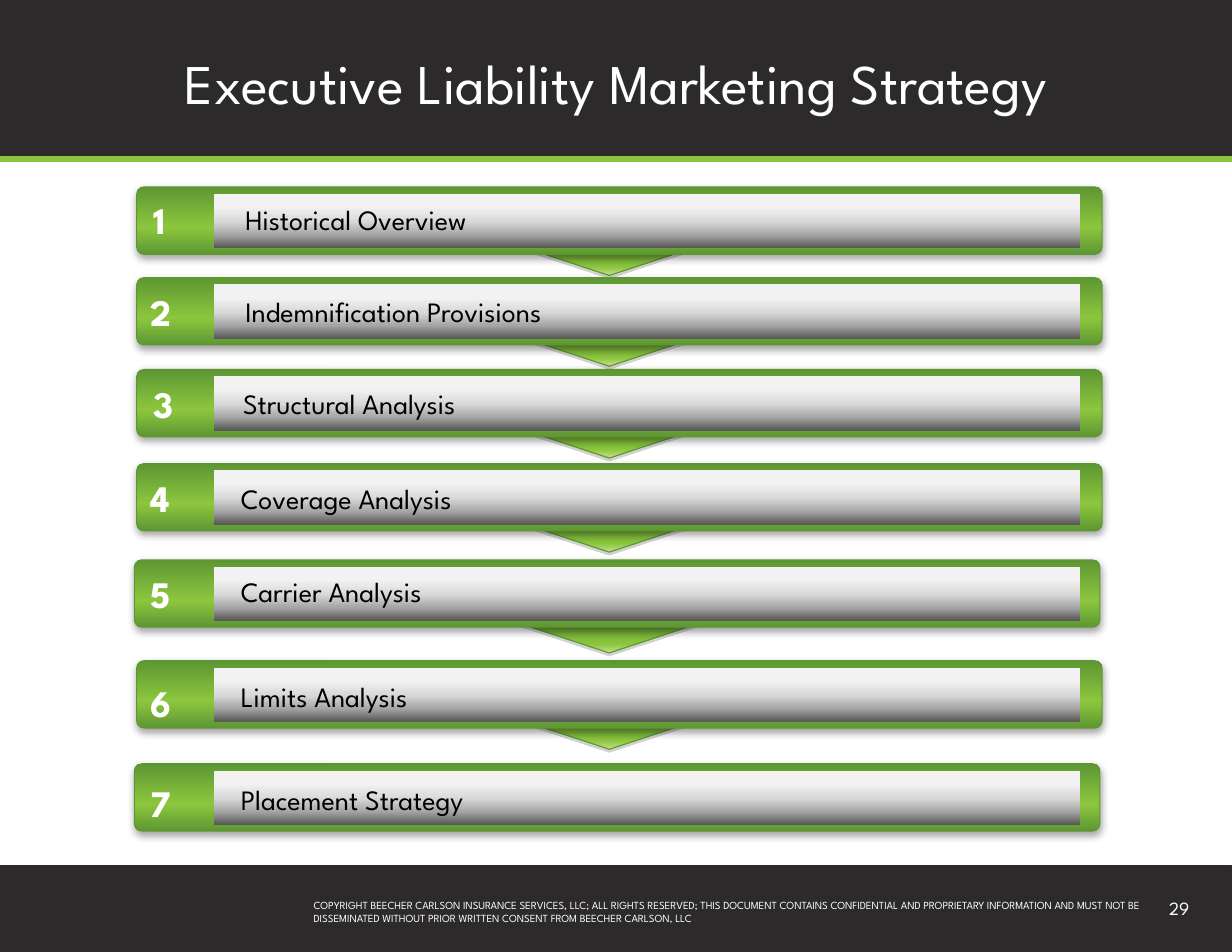
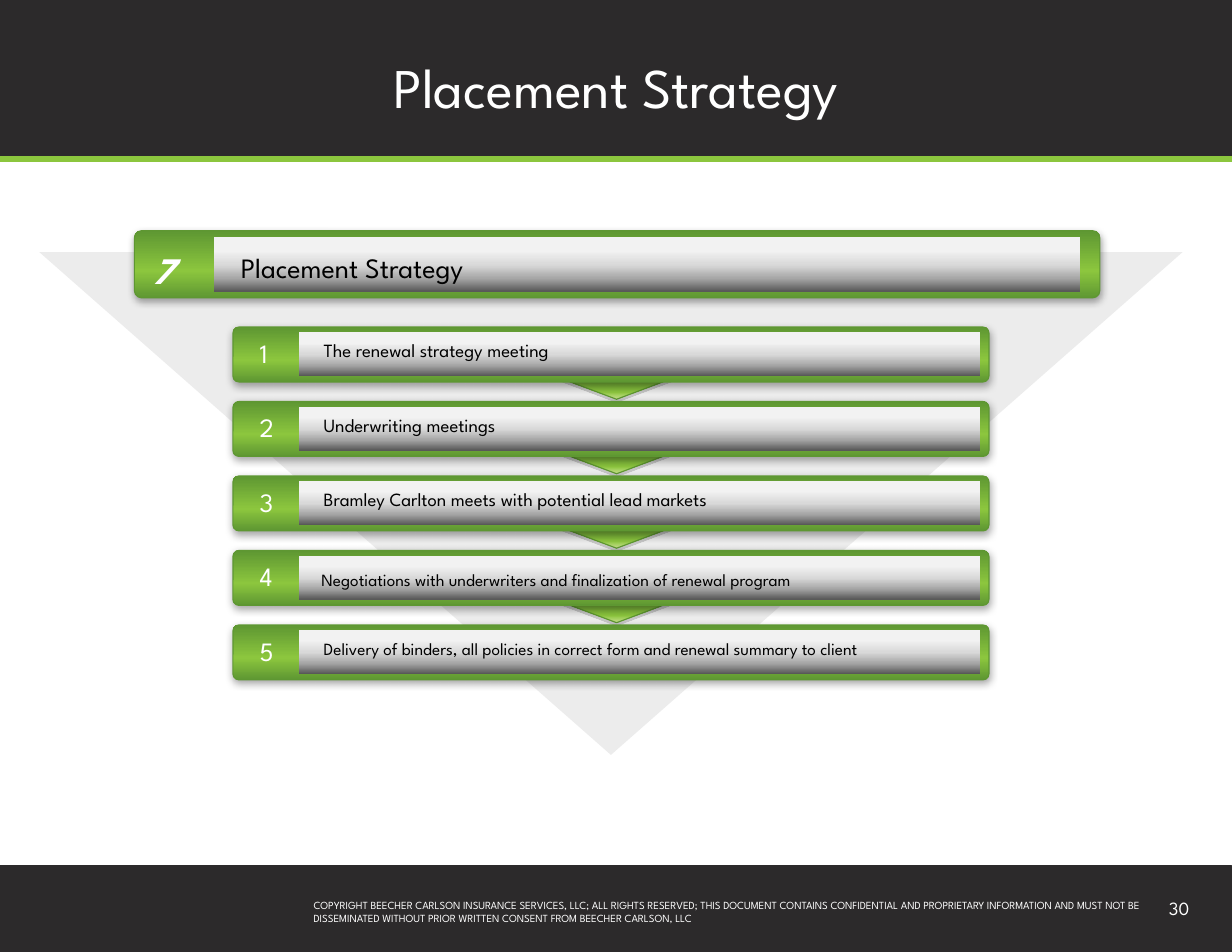
from dataclasses import dataclass

from lxml.etree import SubElement
from pptx import Presentation
from pptx.dml.color import RGBColor
from pptx.enum.shapes import MSO_CONNECTOR, MSO_SHAPE
from pptx.enum.text import MSO_ANCHOR, MSO_AUTO_SIZE, PP_ALIGN
from pptx.oxml.ns import qn
from pptx.util import Inches, Pt

FONT = "League Spartan"
WHITE, BLACK, DARK, PALE = "FFFFFF", "000000", "2C2A2B", "ECECEC"
GREEN, DEEP, LIGHT, GREY = "8CC63E", "5E9732", "C8DF8E", "808080"
BAR_STOPS = [(0, DEEP), (40, GREEN), (100, DEEP)]
ARROW_STOPS = [(0, LIGHT), (25, GREEN), (100, DEEP)]
PANEL_STOPS = [(24, "F2F2F2"), (51, "D9D9D9"), (76, "A6A6A6"), (100, "595959")]
COLS, ROWS = 110, 85
COPYRIGHT = (
    "COPYRIGHT BEECHER CARLSON INSURANCE SERVICES, LLC; ALL RIGHTS RESERVED; "
    "THIS DOCUMENT CONTAINS CONFIDENTIAL AND PROPRIETARY INFORMATION AND MUST NOT BE "
    "DISSEMINATED WITHOUT PRIOR WRITTEN CONSENT FROM BEECHER CARLSON, LLC"
)


@dataclass
class StepSize:
    """Measures of a numbered bar in columns, rows and points."""
    bar_w: float
    bar_h: float
    panel_x: float
    panel_w: float
    panel_h: float
    panel_dy: float
    number_w: float
    number_h: float
    number_pt: float
    bold: bool
    label_w: float
    label_h: float
    arrow_x: float
    arrow_w: float
    arrow_h: float


LARGE = StepSize(86.2, 6, 19.1, 77.35, 4.8, 0.6, 7.3, 5, 24, True,
                 68.1, 3.6, 45.3, 18.2, 3)
SMALL = StepSize(67.5, 4.9, 26.7, 60.8, 3.9, 0.45, 5.3, 3.9, 17, False,
                 59.1, 2.6, 48.4, 13.3, 2.5)


def rgb(value):
    """Turn a hex string into a colour."""
    return RGBColor.from_string(value)


class Deck:
    """Holds the presentation, its style and the current slide."""

    def __init__(self):
        self.prs = Presentation()
        self.prs.slide_width, self.prs.slide_height = Inches(11), Inches(8.5)
        self.s = None

    def box(self, x, y, w, h):
        """Convert columns and rows to slide lengths."""
        col, row = self.prs.slide_width / COLS, self.prs.slide_height / ROWS
        return [round(v) for v in (x * col, y * row, w * col, h * row)]

    def shape(self, kind, at, fill, line=None, line_pt=0.75, shadow=None):
        """Add a shape with a plain or gradient fill and an optional shadow."""
        sp = self.s.shapes.add_shape(kind, *self.box(*at))
        sp.shadow.inherit = False
        if isinstance(fill, str):
            sp.fill.solid()
            sp.fill.fore_color.rgb = rgb(fill)
        else:
            self.gradient(sp, *fill)
        if line:
            sp.line.color.rgb = rgb(line)
            sp.line.width = Pt(line_pt)
        else:
            sp.line.fill.background()
        if shadow:
            self.shadow(sp, *shadow)
        return sp

    def gradient(self, sp, stops, angle):
        """Fill a shape with colour stops along a clockwise angle."""
        sp.fill.gradient()
        sp.fill.gradient_angle = 360 - angle
        stop_list = sp._element.spPr.find(qn("a:gradFill")).find(qn("a:gsLst"))
        for old in list(stop_list):
            stop_list.remove(old)
        for pos, color in stops:
            stop = SubElement(stop_list, qn("a:gs"), pos=str(pos * 1000))
            SubElement(stop, qn("a:srgbClr"), val=color)

    def shadow(self, sp, color, blur):
        """Drop a soft shadow straight below a shape."""
        effects = sp._element.spPr.find(qn("a:effectLst"))
        outer = SubElement(effects, qn("a:outerShdw"), blurRad=str(Pt(blur)),
                           dist=str(Pt(1.8)), dir="5400000", rotWithShape="0")
        tone = SubElement(outer, qn("a:srgbClr"), val=color)
        SubElement(tone, qn("a:alpha"), val="35000")

    def put_text(self, sp, text, pt, color, align=PP_ALIGN.LEFT, anchor=MSO_ANCHOR.TOP,
                 inset=(0.1, 0.05), bold=False, italic=False):
        """Put one formatted paragraph into a shape."""
        tf = sp.text_frame
        tf.word_wrap, tf.auto_size = True, MSO_AUTO_SIZE.NONE
        tf.vertical_anchor = anchor
        tf.margin_left = tf.margin_right = Inches(inset[0])
        tf.margin_top = tf.margin_bottom = Inches(inset[1])
        p = tf.paragraphs[0]
        p.text, p.alignment = text, align
        p.font.name, p.font.size = FONT, Pt(pt)
        p.font.bold, p.font.italic = bold, italic
        p.font.color.rgb = rgb(color)

    def text(self, at, text, pt, color, **style):
        """Add a text box."""
        self.put_text(self.s.shapes.add_textbox(*self.box(*at)), text, pt, color, **style)

    def rule(self, y):
        """Draw the green line across the slide."""
        x, top, w, _ = self.box(0, y, COLS, 0)
        line = self.s.shapes.add_connector(MSO_CONNECTOR.STRAIGHT, x, top, x + w, top)
        line.line.color.rgb = rgb(GREEN)
        line.line.width = Pt(4)
        SubElement(line._element.spPr, qn("a:effectLst"))

    def slide(self, title, number, title_y):
        """Start a slide with its bands, title and footer."""
        self.s = self.prs.slides.add_slide(self.prs.slide_layouts[5])
        for y, h in ((77.4, 7.6), (0, 14.2)):
            self.shape(MSO_SHAPE.RECTANGLE, (0, y, COLS, h), DARK, DARK, 2)
        self.rule(14.2)
        self.text((28, 80.2, 76.5, 2.4), COPYRIGHT, 7, WHITE,
                  anchor=MSO_ANCHOR.BOTTOM, inset=(0, 0))
        self.text((81.6, 79.5, 25.7, 4.5), str(number), 12, WHITE,
                  align=PP_ALIGN.RIGHT, inset=(0.11, 0.06))
        sp = self.s.shapes.title
        sp.left, sp.top, sp.width, sp.height = self.box(5, title_y, 100, 6.3)
        self.put_text(sp, title, 36, WHITE, align=PP_ALIGN.CENTER,
                      anchor=MSO_ANCHOR.MIDDLE, inset=(0.11, 0.06))
        self.s.shapes._spTree.append(sp._element)

    def arrow(self, size, y):
        """Add the arrowhead that points to the next bar."""
        sp = self.shape(MSO_SHAPE.ISOSCELES_TRIANGLE,
                        (size.arrow_x, y, size.arrow_w, size.arrow_h),
                        (ARROW_STOPS, 90), DEEP, shadow=(GREY, 0))
        sp.rotation = 180

    def step(self, size, number, label, bar, number_at, label_at, pt,
             arrow_dy=None, italic=False):
        """Add a numbered bar; number and label tops count from the bar's top."""
        x, y = bar
        if arrow_dy:
            self.arrow(size, y + arrow_dy)
        sp = self.shape(MSO_SHAPE.ROUNDED_RECTANGLE, (x, y, size.bar_w, size.bar_h),
                        (BAR_STOPS, 270), DEEP, shadow=(BLACK, 5))
        sp.adjustments[0] = 0.11
        self.shape(MSO_SHAPE.RECTANGLE,
                   (size.panel_x, y + size.panel_dy, size.panel_w, size.panel_h),
                   (PANEL_STOPS, 90))
        self.text((number_at[0], y + number_at[1], size.number_w, size.number_h),
                  str(number), size.number_pt, WHITE, bold=size.bold, italic=italic)
        self.text((label_at[0], y + label_at[1], size.label_w, size.label_h),
                  label, pt, BLACK, inset=(0.05, 0.03))


def strategy_slide(deck):
    """Build the overview of the seven steps."""
    deck.slide("Executive Liability Marketing Strategy", 29, 4.2)
    steps = [
        ("Historical Overview", (12.2, 16.7), (12.7, 0.4), (21.4, 1.1), 4.9),
        ("Indemnification Provisions", (12.2, 24.8), (12.5, 0.5), (21.4, 1.2), 4.9),
        ("Structural Analysis", (12.2, 33), (12.7, 0.5), (21.2, 1.2), 4.9),
        ("Coverage Analysis", (12.2, 41.4), (12.5, 0.5), (21, 1.3), 4.9),
        ("Carrier Analysis", (12, 50), (12.5, 0.5), (21, 1), 5.3),
        ("Limits Analysis", (12.2, 59), (12.5, 1.2), (21, 1.4), 4.9),
        ("Placement Strategy", (12, 68.2), (12.5, 1), (21, 1.4), None),
    ]
    for number, (label, bar, number_at, label_at, arrow_dy) in enumerate(steps, 1):
        deck.step(LARGE, number, label, bar, number_at, label_at, 18, arrow_dy)


def placement_slide(deck):
    """Build the detail of the seventh step."""
    deck.slide("Placement Strategy", 30, 4.5)
    deck.shape(MSO_SHAPE.FLOWCHART_MERGE, (3.5, 22.5, 102.1, 44.9), PALE)
    deck.step(LARGE, 7, "Placement Strategy", (12, 20.6), (12.7, 1), (21, 1.5), 18,
              italic=True)
    steps = [
        ("The renewal strategy meeting", (28.4, 0.8), 12),
        ("Underwriting meetings", (28.4, 0.8), 12),
        ("Bramley Carlton meets with potential lead markets", (28.4, 0.8), 12),
        ("Negotiations with underwriters and finalization of renewal program",
         (28.2, 1.35), 11),
        ("Delivery of binders, all policies in correct form and renewal summary to client",
         (28.4, 0.9), 11),
    ]
    for i, (label, label_at, pt) in enumerate(steps):
        deck.step(SMALL, i + 1, label, (20.8, 29.2 + 6.65 * i), (22.2, 0.4), label_at, pt,
                  3.95 if i < len(steps) - 1 else None)


def main():
    """Build both slides and save them."""
    deck = Deck()
    strategy_slide(deck)
    placement_slide(deck)
    deck.prs.save("out.pptx")


if __name__ == "__main__":
    main()
